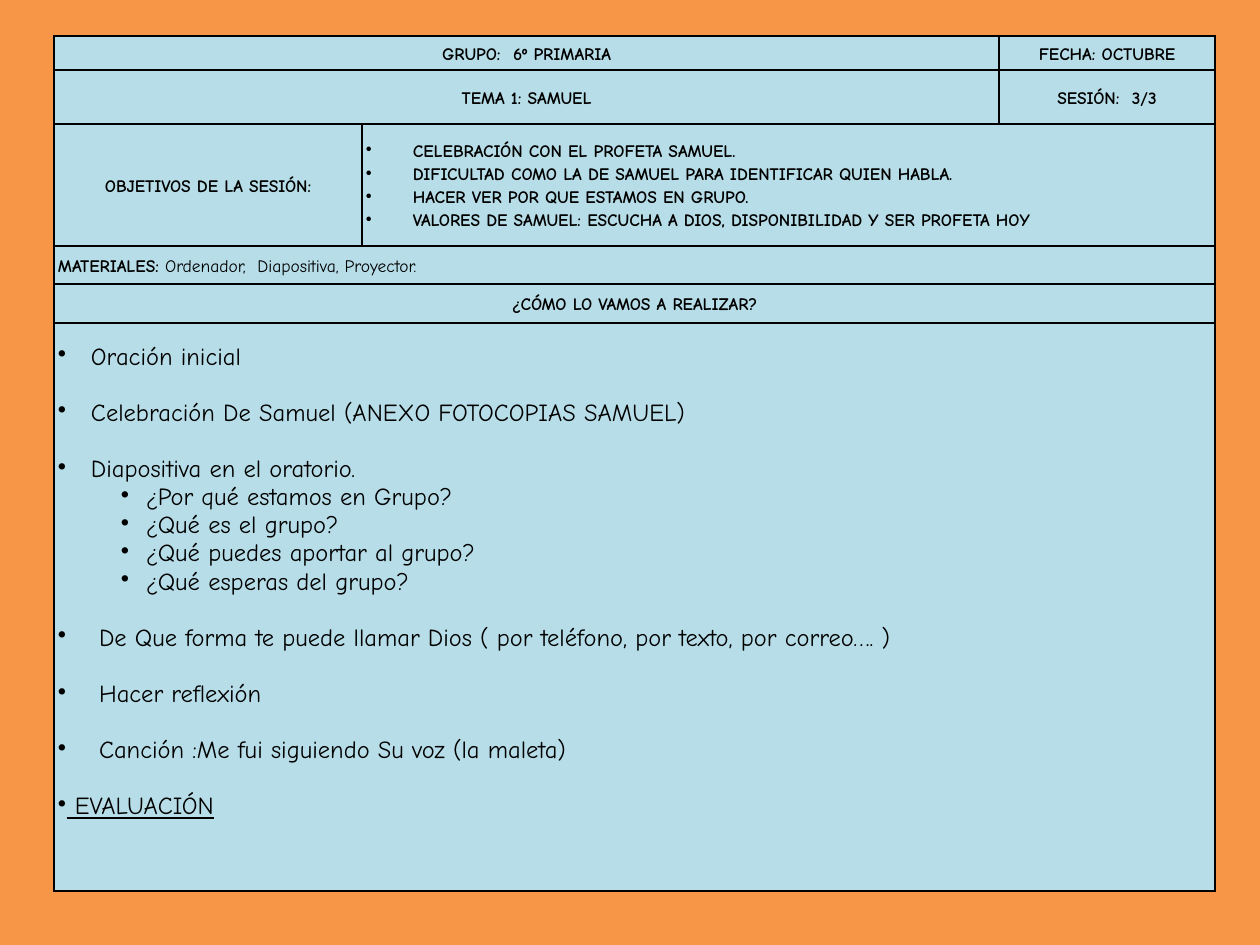
"""Builds the session plan slide for the Samuel unit as one merged table."""
import dataclasses

import pptx
import pptx.dml.color
import pptx.enum.text
import pptx.oxml.ns
import pptx.util
from lxml import etree


@dataclasses.dataclass(frozen=True)
class Theme:
    background: str = "F79646"
    cell: str = "B7DEE8"
    ink: str = "000000"
    font: str = "Comic Neue"
    small: int = 10
    body: int = 14
    gap: int = 16
    border: int = 1


theme = Theme()
SCALE = 914400 / 126
CENTER = pptx.enum.text.PP_ALIGN.CENTER
LEFT = pptx.enum.text.PP_ALIGN.LEFT


def px(length):
    return pptx.util.Emu(round(length * SCALE))


def style(paragraph, size, bold, bullet=None):
    for run in paragraph.runs:
        run.font.name = theme.font
        run.font.size = pptx.util.Pt(size)
        run.font.bold = bold
        run.font.color.rgb = pptx.dml.color.RGBColor.from_string(theme.ink)
    if bullet:
        margin, indent = bullet
        properties = paragraph._p.get_or_add_pPr()
        properties.set("marL", str(px(margin)))
        properties.set("indent", str(px(indent)))
        etree.SubElement(properties, pptx.oxml.ns.qn("a:buChar")).set("char", "•")


presentation = pptx.Presentation()
presentation.slide_width = px(1260)
presentation.slide_height = px(945)
slide = presentation.slides.add_slide(presentation.slide_layouts[6])
slide.background.fill.solid()
slide.background.fill.fore_color.rgb = pptx.dml.color.RGBColor.from_string(theme.background)

column_widths = [308, 637, 216]
row_heights = [34, 54, 122, 38, 39, 568]
table = slide.shapes.add_table(
    len(row_heights), len(column_widths), px(54), px(36), px(sum(column_widths)), px(sum(row_heights))
).table
table.first_row = False
table.horz_banding = False
for column, width in zip(table.columns, column_widths):
    column.width = px(width)
for row, height in zip(table.rows, row_heights):
    row.height = px(height)

for cell in table.iter_cells():
    cell.margin_left = cell.margin_right = px(4)
    cell.margin_top = cell.margin_bottom = 0
    cell.vertical_anchor = pptx.enum.text.MSO_ANCHOR.MIDDLE
    properties = cell._tc.get_or_add_tcPr()
    for side in ("lnL", "lnR", "lnT", "lnB"):
        line = etree.SubElement(properties, pptx.oxml.ns.qn(f"a:{side}"), w=str(pptx.util.Pt(theme.border)))
        line_fill = etree.SubElement(line, pptx.oxml.ns.qn("a:solidFill"))
        etree.SubElement(line_fill, pptx.oxml.ns.qn("a:srgbClr"), val=theme.ink)
    cell.fill.solid()
    cell.fill.fore_color.rgb = pptx.dml.color.RGBColor.from_string(theme.cell)

merges = [(0, 0, 1), (1, 0, 1), (2, 1, 2), (3, 0, 2), (4, 0, 2), (5, 0, 2)]
for row, first, last in merges:
    table.cell(row, first).merge(table.cell(row, last))

headings = [
    (0, 0, "GRUPO:  6º PRIMARIA", CENTER),
    (0, 2, "FECHA: OCTUBRE", CENTER),
    (1, 0, "TEMA 1: SAMUEL", CENTER),
    (1, 2, "SESIÓN:  3/3", CENTER),
    (2, 0, "OBJETIVOS DE LA SESIÓN:", CENTER),
    (3, 0, "MATERIALES: ", LEFT),
    (4, 0, "¿CÓMO LO VAMOS A REALIZAR?", CENTER),
]
for row, column, text, alignment in headings:
    paragraph = table.cell(row, column).text_frame.paragraphs[0]
    paragraph.text = text
    paragraph.alignment = alignment
    paragraph.line_spacing = 1.15
    style(paragraph, theme.small, True)

materials = table.cell(3, 0).text_frame.paragraphs[0]
materials.add_run().text = "Ordenador,  Diapositiva, Proyector."
style(materials, theme.small, False)
materials.runs[0].font.bold = True

objectives = [
    "CELEBRACIÓN CON EL PROFETA SAMUEL.",
    "DIFICULTAD COMO LA DE SAMUEL PARA IDENTIFICAR QUIEN HABLA.",
    "HACER VER POR QUE ESTAMOS EN GRUPO.",
    "VALORES DE SAMUEL: ESCUCHA A DIOS, DISPONIBILIDAD Y SER PROFETA HOY",
]
objectives_frame = table.cell(2, 1).text_frame
objectives_frame.text = "\n".join(objectives)
for paragraph in objectives_frame.paragraphs:
    paragraph.line_spacing = 1.15
    style(paragraph, theme.small, True, (47, -47))

MAIN, QUESTION, LATER, CLOSING = (33, -33), (88, -25), (41, -41), (0, 0)
activities = [
    ("Oración inicial", MAIN),
    ("Celebración De Samuel (ANEXO FOTOCOPIAS SAMUEL)", MAIN),
    ("Diapositiva en el oratorio.", MAIN),
    ("¿Por qué estamos en Grupo?", QUESTION),
    ("¿Qué es el grupo?", QUESTION),
    ("¿Qué puedes aportar al grupo?", QUESTION),
    ("¿Qué esperas del grupo?", QUESTION),
    ("De Que forma te puede llamar Dios ( por teléfono, por texto, por correo…. )", LATER),
    ("Hacer reflexión", LATER),
    ("Canción :Me fui siguiendo Su voz (la maleta)", LATER),
    (" EVALUACIÓN", CLOSING),
]
activities_cell = table.cell(5, 0)
activities_cell.vertical_anchor = pptx.enum.text.MSO_ANCHOR.TOP
activities_cell.margin_top = px(20)
activities_frame = activities_cell.text_frame
activities_frame.text = "\n".join(text for text, _ in activities)
for index, (paragraph, (_, bullet)) in enumerate(zip(activities_frame.paragraphs, activities)):
    if bullet == QUESTION:
        paragraph.level = 1
    elif index:
        paragraph.space_before = pptx.util.Pt(theme.gap)
    style(paragraph, theme.body, False, bullet)
activities_frame.paragraphs[-1].runs[0].font.underline = True

presentation.save("out.pptx")
